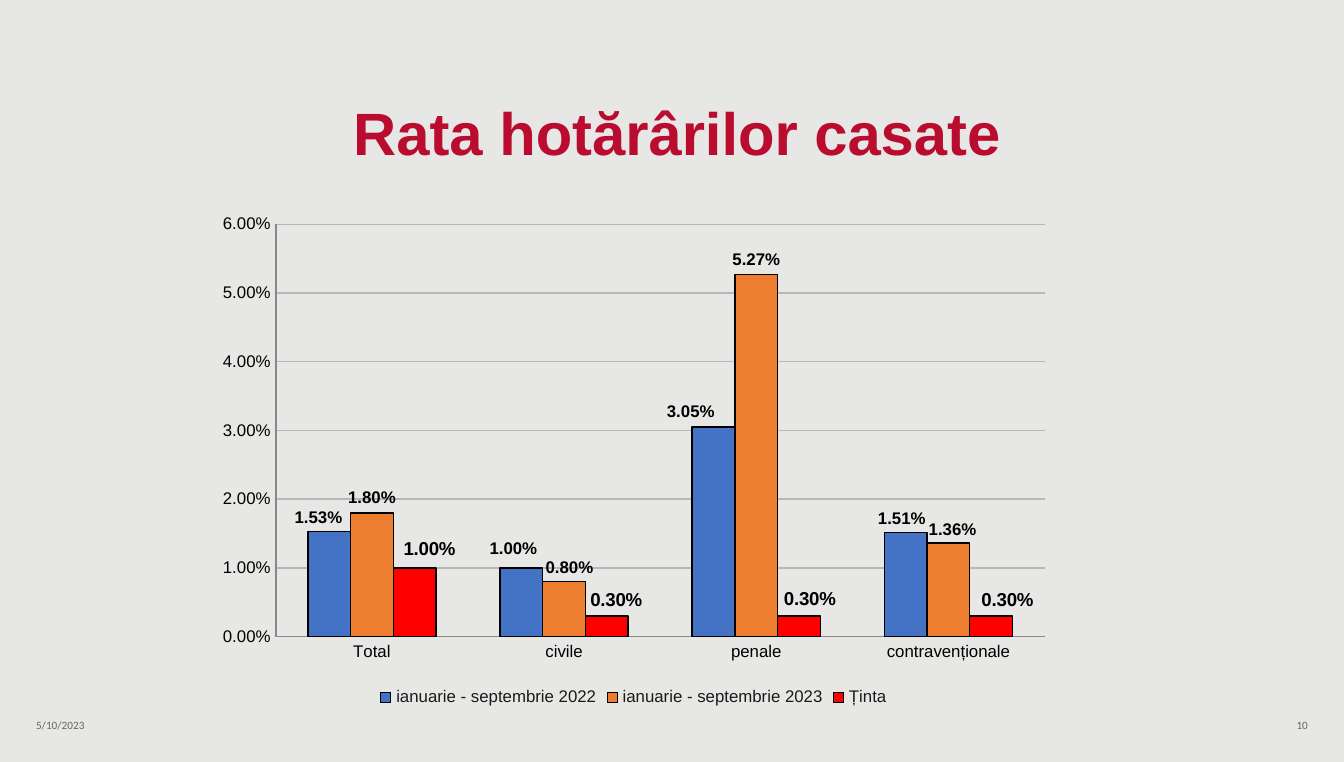
from dataclasses import dataclass

import pptx
import pptx.chart.data
import pptx.dml.color
import pptx.enum.chart
import pptx.enum.text
import pptx.oxml
import pptx.oxml.ns
import pptx.util

Inches = pptx.util.Inches
Pt = pptx.util.Pt
Align = pptx.enum.text.PP_ALIGN
Anchor = pptx.enum.text.MSO_ANCHOR
Kind = pptx.enum.chart


@dataclass(frozen=True)
class Theme:
    back: str = "E7E7E5"
    title: str = "BA0C2F"
    foot: str = "6C6463"
    ink: str = "000000"
    legend: str = "1A1A1A"
    grid: str = "B7B7B7"
    axis: str = "888888"
    face: str = "Arial"
    small: str = "Calibri"
    title_size: float = 32
    foot_size: float = 6
    chart_size: float = 10
    tick_size: float = 9
    rate: str = "0.00%"


@dataclass(frozen=True)
class Label:
    text: str
    box: tuple
    face: str
    size: float
    color: str
    align: Align
    anchor: Anchor = Anchor.MIDDLE
    bold: bool = False


@dataclass(frozen=True)
class Series:
    name: str
    rates: tuple
    color: str
    size: float
    shifts: dict  # point index -> label offset in inches


THEME = Theme()

LABELS = (
    Label("5/10/2023", (0.17, 5.3, 2.33, 0.2), THEME.small, THEME.foot_size,
          THEME.foot, Align.LEFT),
    Label("10", (7.5, 5.3, 2.33, 0.2), THEME.small, THEME.foot_size,
          THEME.foot, Align.RIGHT),
    Label("Rata hotărârilor casate", (0.79, 0.79, 8.5, 0.51), THEME.face,
          THEME.title_size, THEME.title, Align.CENTER, Anchor.BOTTOM, True),
)

GROUPS = ("Total", "civile", "penale", "contravenționale")
SERIES = (
    Series("ianuarie - septembrie 2022", (0.0153, 0.01, 0.0305, 0.0151),
           "4472C4", THEME.tick_size,
           {0: (-0.08, 0.01), 1: (-0.06, -0.03), 2: (-0.17, 0), 3: (-0.03, 0.01)}),
    Series("ianuarie - septembrie 2023", (0.018, 0.008, 0.0527, 0.0136),
           "ED7D31", THEME.tick_size, {1: (0.04, 0.01), 3: (0.03, 0.01)}),
    Series("Ținta", (0.01, 0.003, 0.003, 0.003),
           "FF0000", THEME.chart_size,
           {0: (0.11, -0.02), 1: (0.07, 0), 2: (0.08, -0.01), 3: (0.12, 0)}),
)
CHART = (1.53, 1.53, 6.37, 3.77)
PLOT = (0.52, 0.14, 5.72, 3.07)  # inside the chart


def rgb(color: str) -> pptx.dml.color.RGBColor:
    return pptx.dml.color.RGBColor.from_string(color)


def set_font(font, face: str, size: float, color: str, bold: bool = False) -> None:
    font.name, font.size, font.bold = face, Pt(size), bold
    font.color.rgb = rgb(color)


def set_line(line, color: str) -> None:
    line.color.rgb = rgb(color)
    line.width = Pt(0.75)


def add_label(slide, item: Label) -> None:
    frame = slide.shapes.add_textbox(*map(Inches, item.box)).text_frame
    frame.word_wrap = True
    frame.vertical_anchor = item.anchor
    para = frame.paragraphs[0]
    para.text = item.text
    para.alignment = item.align
    para.line_spacing = 0.9
    set_font(para.font, item.face, item.size, item.color, item.bold)


def make_layout(tags: dict):
    ns = pptx.oxml.ns.nsdecls("c")
    body = "".join(f'<c:{tag} val="{val}"/>' for tag, val in tags.items())
    return pptx.oxml.parse_xml(
        f"<c:layout {ns}><c:manualLayout>{body}</c:manualLayout></c:layout>")


def place_plot(chart) -> None:
    area = chart._chartSpace.chart.plotArea
    for old in area.findall(pptx.oxml.ns.qn("c:layout")):
        area.remove(old)
    x, y, wide, high = (round(part / CHART[2 + i % 2], 3)
                        for i, part in enumerate(PLOT))
    area.insert(0, make_layout({"layoutTarget": "inner", "xMode": "edge",
                                "yMode": "edge", "x": x, "y": y,
                                "w": wide, "h": high}))


def shift_label(point, item: Series, shift: tuple) -> None:
    label = point.data_label
    set_font(label.font, THEME.face, item.size, THEME.ink, True)
    label.position = Kind.XL_LABEL_POSITION.OUTSIDE_END
    node = label._dLbl
    ns = pptx.oxml.ns.nsdecls("c")
    node.insert(1, make_layout({"x": round(shift[0] / CHART[2], 4),
                                "y": round(shift[1] / CHART[3], 4)}))
    node.insert(2, pptx.oxml.parse_xml(
        f'<c:numFmt {ns} formatCode="{THEME.rate}" sourceLinked="0"/>'))


def style_bars(bars, item: Series) -> None:
    bars.format.fill.solid()
    bars.format.fill.fore_color.rgb = rgb(item.color)
    set_line(bars.format.line, THEME.ink)
    bars.invert_if_negative = False
    labels = bars.data_labels
    labels.show_value = True
    labels.number_format = THEME.rate
    labels.number_format_is_linked = False
    labels.position = Kind.XL_LABEL_POSITION.OUTSIDE_END
    set_font(labels.font, THEME.face, item.size, THEME.ink, True)
    for i, shift in item.shifts.items():
        shift_label(bars.points[i], item, shift)


def add_rates(slide) -> None:
    data = pptx.chart.data.CategoryChartData(number_format=THEME.rate)
    data.categories = GROUPS
    for item in SERIES:
        data.add_series(item.name, item.rates)
    chart = slide.shapes.add_chart(Kind.XL_CHART_TYPE.COLUMN_CLUSTERED,
                                   *map(Inches, CHART), data).chart
    set_font(chart.font, THEME.face, THEME.chart_size, THEME.ink)
    chart.has_title = False
    place_plot(chart)

    # Bars
    plot = chart.plots[0]
    plot.gap_width, plot.overlap = 150, 0
    plot.vary_by_categories = False
    for bars, item in zip(plot.series, SERIES):
        style_bars(bars, item)

    # Axes
    for axis in (chart.category_axis, chart.value_axis):
        axis.major_tick_mark = axis.minor_tick_mark = Kind.XL_TICK_MARK.NONE
        set_font(axis.tick_labels.font, THEME.face, THEME.tick_size, THEME.ink)
        set_line(axis.format.line, THEME.axis)
    rates = chart.value_axis
    rates.minimum_scale, rates.maximum_scale, rates.major_unit = 0, 0.06, 0.01
    rates.tick_labels.number_format = THEME.rate
    rates.tick_labels.number_format_is_linked = False
    set_line(rates.major_gridlines.format.line, THEME.grid)

    # Legend
    chart.has_legend = True
    chart.legend.position = Kind.XL_LEGEND_POSITION.BOTTOM
    chart.legend.include_in_layout = False
    set_font(chart.legend.font, THEME.face, THEME.tick_size, THEME.legend)


def main() -> None:
    deck = pptx.Presentation()
    deck.slide_width, deck.slide_height = Inches(10), Inches(5.67)
    slide = deck.slides.add_slide(deck.slide_layouts[6])
    slide.background.fill.solid()
    slide.background.fill.fore_color.rgb = rgb(THEME.back)
    for item in LABELS:
        add_label(slide, item)
    add_rates(slide)
    deck.save("out.pptx")


if __name__ == "__main__":
    main()
